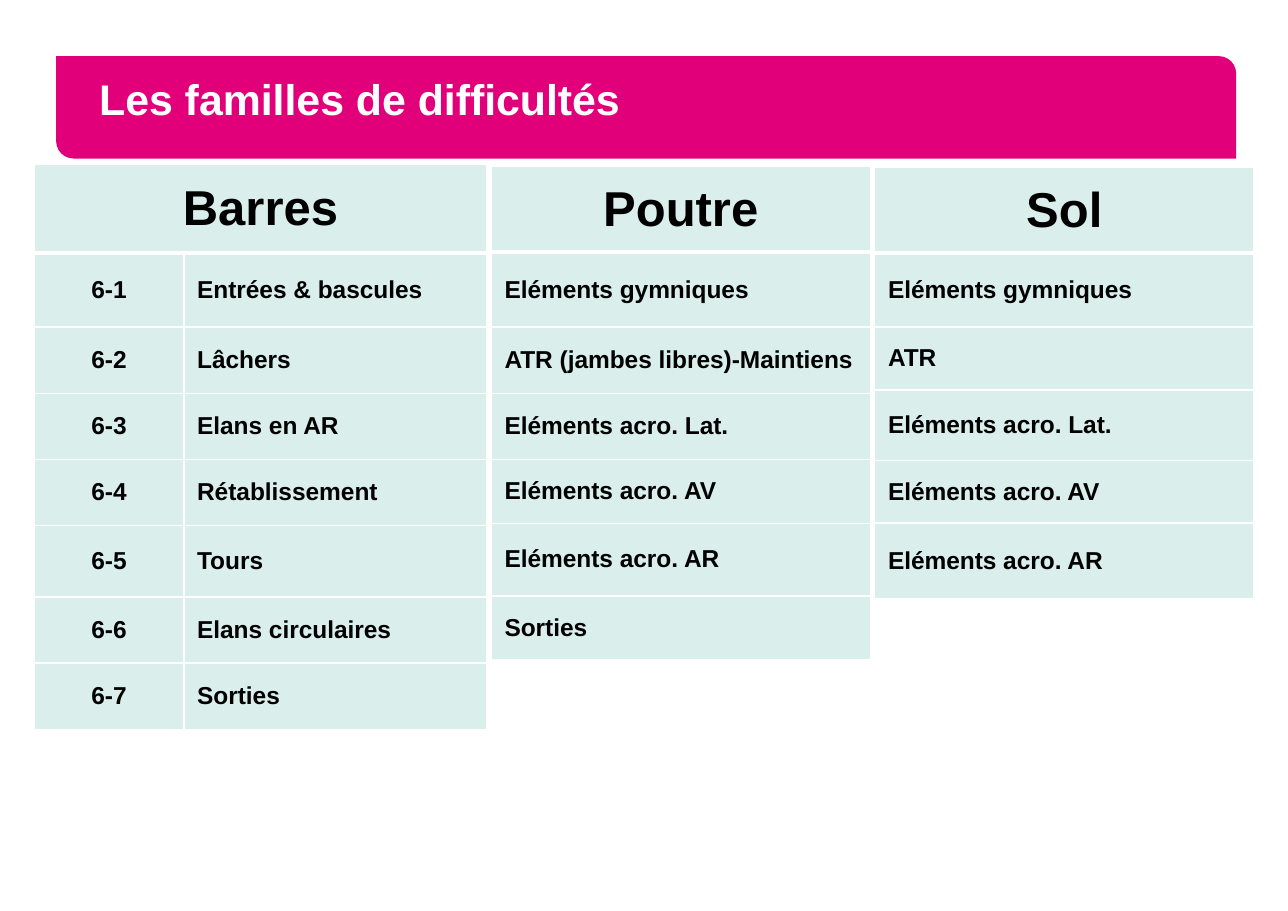
import pptx
import pptx.util
import pptx.dml.color
import pptx.enum.shapes
import pptx.enum.text
import pptx.oxml

PX = 9144  # 100 px to the inch
COLORS = {"banner": "E2007A", "cell": "DAEFEB", "line": "FFFFFF",
          "title": "FFFFFF", "text": "000000"}
FONT = "Arial"
ALIGN = pptx.enum.text.PP_ALIGN
MIDDLE = pptx.enum.text.MSO_ANCHOR.MIDDLE
NS = "http://schemas.openxmlformats.org/drawingml/2006/main"

GAP = 4
TABLES = [
    {"name": "Barres", "top": 149, "cols": [136, 275],
     "heights": [81, 67, 60, 60, 60, 65, 60, 60],
     "rows": [["6-1", "Entrées & bascules"], ["6-2", "Lâchers"],
              ["6-3", "Elans en AR"], ["6-4", "Rétablissement"],
              ["6-5", "Tours"], ["6-6", "Elans circulaires"],
              ["6-7", "Sorties"]]},
    {"name": "Poutre", "top": 151, "cols": [344],
     "heights": [78, 68, 60, 60, 58, 66, 58],
     "rows": [["Eléments gymniques"], ["ATR (jambes libres)-Maintiens"],
              ["Eléments acro. Lat."], ["Eléments acro. AV"],
              ["Eléments acro. AR"], ["Sorties"]]},
    {"name": "Sol", "top": 152, "cols": [344],
     "heights": [78, 67, 57, 64, 57, 69],
     "rows": [["Eléments gymniques"], ["ATR"], ["Eléments acro. Lat."],
              ["Eléments acro. AV"], ["Eléments acro. AR"]]},
]


def px(*lengths):
    return [pptx.util.Emu(n * PX) for n in lengths]


def rgb(name):
    return pptx.dml.color.RGBColor.from_string(COLORS[name])


def set_attrs(obj, values):
    for name, value in values.items():
        setattr(obj, name, value)


def write(p, text, size, color, align):
    p.alignment = align
    r = p.add_run()
    r.text = text
    set_attrs(r.font, {"name": FONT, "size": pptx.util.Pt(size), "bold": True})
    r.font.color.rgb = rgb(color)


def set_borders(cell, widths):
    tcPr = cell._tc.get_or_add_tcPr()
    for i, (side, width) in enumerate(widths.items()):
        tcPr.insert(i, pptx.oxml.parse_xml(
            f'<a:ln{side} xmlns:a="{NS}" w="{pptx.util.Pt(width)}"><a:solidFill>'
            f'<a:srgbClr val="{COLORS["line"]}"/></a:solidFill></a:ln{side}>'))


def add_banner(s, box, text):
    # Coloured band, placed behind the title
    sp = s.shapes.add_shape(
        pptx.enum.shapes.MSO_SHAPE.ROUND_2_DIAG_RECTANGLE, *px(*box))
    sp.adjustments[0], sp.adjustments[1] = 0, 0.17
    sp.shadow.inherit = False
    sp.fill.solid()
    sp.fill.fore_color.rgb = rgb("banner")
    sp.line.fill.background()

    # Title
    title = s.shapes.title
    title._element.addprevious(sp._element)
    set_attrs(title, dict(zip(("left", "top", "width", "height"), px(*box))))
    side, edge = px(39, 5)
    tf = title.text_frame
    set_attrs(tf, {"margin_left": side, "margin_right": side,
                   "margin_top": edge, "margin_bottom": edge,
                   "vertical_anchor": MIDDLE, "word_wrap": True,
                   "auto_size": pptx.enum.text.MSO_AUTO_SIZE.NONE})
    p = tf.paragraphs[0]
    p.line_spacing = pptx.util.Pt(22)
    write(p, text, 28, "title", ALIGN.LEFT)


def add_family_table(s, left, family):
    cols, heights = family["cols"], family["heights"]
    table = s.shapes.add_table(
        len(heights), len(cols),
        *px(left, family["top"], sum(cols), sum(heights))).table
    set_attrs(table, {"first_row": False, "horz_banding": False})
    for col, width in zip(table.columns, px(*cols)):
        col.width = width
    for row, height in zip(table.rows, px(*heights)):
        row.height = height

    # Apparatus name across all columns
    if len(cols) > 1:
        table.cell(0, 0).merge(table.cell(0, len(cols) - 1))
    write(table.cell(0, 0).text_frame.paragraphs[0],
          family["name"], 32, "text", ALIGN.CENTER)

    # Families: the number column is centred
    for i, row in enumerate(family["rows"], 1):
        for j, text in enumerate(row):
            numbered = j < len(cols) - 1
            write(table.cell(i, j).text_frame.paragraphs[0], text, 16, "text",
                  ALIGN.CENTER if numbered else ALIGN.LEFT)

    # Fill, margins and borders, thicker under the name
    side, edge = px(12, 6)
    for i, row in enumerate(table.rows):
        for cell in row.cells:
            set_attrs(cell, {"margin_left": side, "margin_right": side,
                             "margin_top": edge, "margin_bottom": edge,
                             "vertical_anchor": MIDDLE})
            cell.fill.solid()
            cell.fill.fore_color.rgb = rgb("cell")
            set_borders(cell, {"L": 1, "R": 1, "T": 3 if i == 1 else 1,
                               "B": 3 if i == 0 else 1})


def main():
    prs = pptx.Presentation()
    prs.slide_width, prs.slide_height = px(1169, 827)
    s = prs.slides.add_slide(prs.slide_layouts[5])
    add_banner(s, (51, 51, 1071, 93), "Les familles de difficultés")
    left = 31
    for family in TABLES:
        add_family_table(s, left, family)
        left += sum(family["cols"]) + GAP
    prs.save("out.pptx")


if __name__ == "__main__":
    main()
